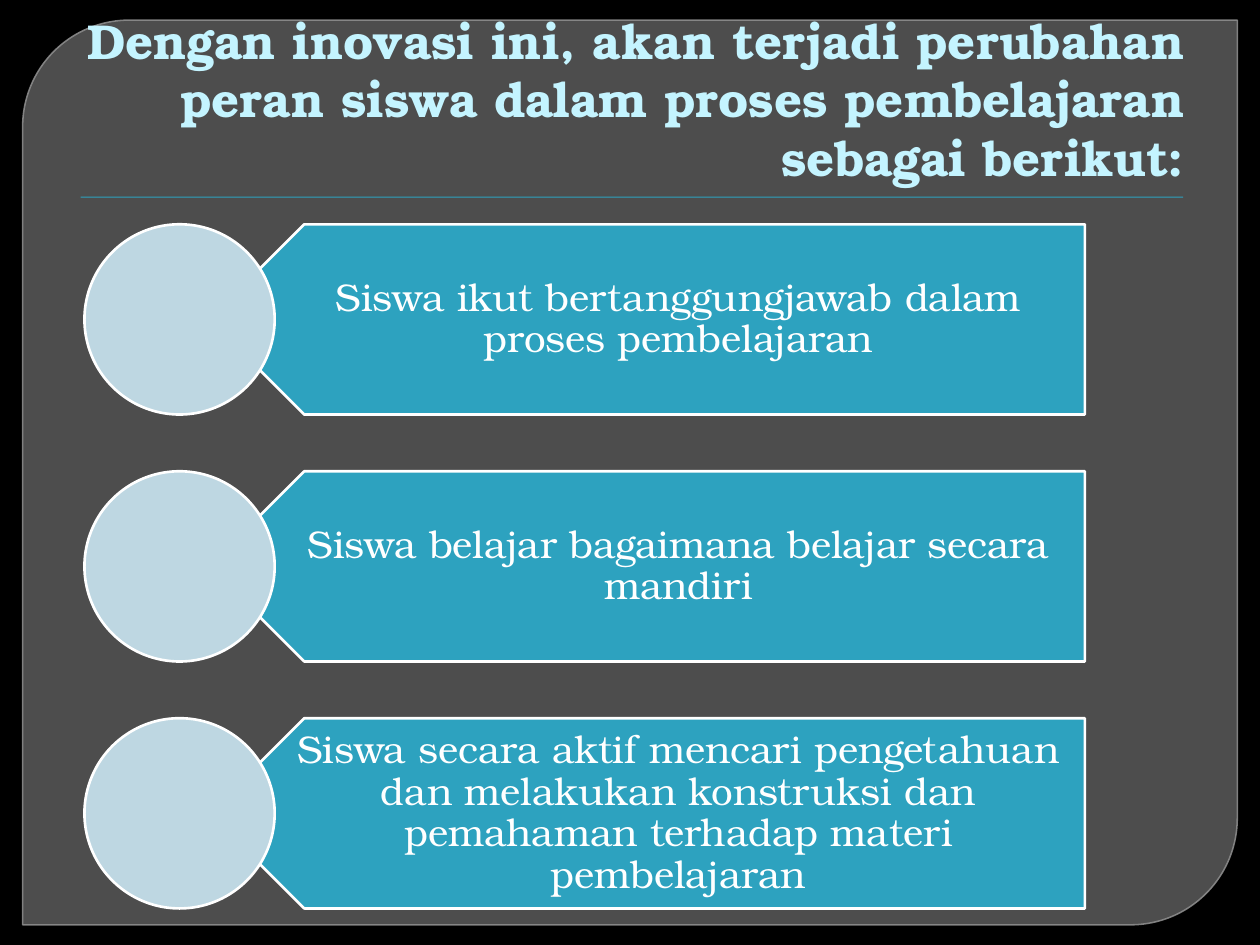
from dataclasses import dataclass

from lxml import etree
from pptx import Presentation
from pptx.dml.color import RGBColor
from pptx.enum.shapes import MSO_SHAPE
from pptx.enum.text import MSO_ANCHOR, PP_ALIGN
from pptx.oxml.ns import qn
from pptx.util import Inches, Pt

PANEL, RECT = MSO_SHAPE.ROUND_2_DIAG_RECTANGLE, MSO_SHAPE.RECTANGLE
PENTAGON, CIRCLE = MSO_SHAPE.PENTAGON, MSO_SHAPE.OVAL
MIDDLE, BOTTOM = MSO_ANCHOR.MIDDLE, MSO_ANCHOR.BOTTOM
CENTER, RIGHT = PP_ALIGN.CENTER, PP_ALIGN.RIGHT


@dataclass(frozen=True)
class Theme:
    """Colours, font and type sizes of the slide."""
    background: str = "000000"
    panel: str = "777777"
    panel_line: str = "8E8E8E"
    accent: str = "2DA2BF"
    circle: str = "BED7E2"
    title: str = "C4F4FF"
    white: str = "FFFFFF"
    font: str = "TeX Gyre Bonum"
    title_size: int = 28
    body_size: int = 22


@dataclass(frozen=True)
class Box:
    """A rectangle in inches."""
    left: float
    top: float
    width: float
    height: float

    def emu(self) -> tuple:
        """Return the rectangle as python-pptx lengths."""
        return tuple(Inches(v) for v in (self.left, self.top, self.width, self.height))


@dataclass(frozen=True)
class Rows:
    """Equally spaced rows, each a circle overlapping a banner."""
    top: float = 1.78
    pitch: float = 1.96
    size: float = 1.51
    circle_left: float = 0.67
    banner_left: float = 1.66
    banner_width: float = 6.95

    def circle(self, i: int) -> Box:
        """Return the circle's place in row i."""
        return Box(self.circle_left, self.top + i * self.pitch, self.size, self.size)

    def banner(self, i: int) -> Box:
        """Return the banner's place in row i."""
        return Box(self.banner_left, self.top + i * self.pitch, self.banner_width, self.size)


THEME = Theme()
ROWS = Rows()
TITLE = ("Dengan inovasi ini, akan terjadi perubahan peran siswa "
         "dalam proses pembelajaran sebagai berikut:")
ROLES = (
    "Siswa ikut bertanggungjawab dalam proses pembelajaran",
    "Siswa belajar bagaimana belajar secara mandiri",
    "Siswa secara aktif mencari pengetahuan dan melakukan konstruksi dan "
    "pemahaman terhadap materi pembelajaran",
)


def set_alpha(fill_parent, percent: int) -> None:
    """Make the solid fill directly under an element translucent."""
    color = fill_parent.find(qn("a:solidFill"))[0]
    etree.SubElement(color, qn("a:alpha")).set("val", str(percent * 1000))


def add_shape(s, kind, box: Box, fill: str, line: str = "", weight: float = 1.5):
    """Draw a flat preset shape, outlined only when a line colour is given."""
    sp = s.shapes.add_shape(kind, *box.emu())
    sp.shadow.inherit = False
    sp.fill.solid()
    sp.fill.fore_color.rgb = RGBColor.from_string(fill)
    if line:
        sp.line.color.rgb = RGBColor.from_string(line)
        sp.line.width = Pt(weight)
    else:
        sp.line.fill.background()
    return sp


def add_text(s, box: Box, text: str, *, size: int, color: str, align, anchor,
             bold: bool = False, spacing: float = 1.0,
             insets: tuple = (0.1, 0.05, 0.1, 0.05)):
    """Place one formatted paragraph in a wrapping text box."""
    tf = s.shapes.add_textbox(*box.emu()).text_frame
    tf.word_wrap = True
    tf.vertical_anchor = anchor
    tf.margin_left, tf.margin_top, tf.margin_right, tf.margin_bottom = map(Inches, insets)
    p = tf.paragraphs[0]
    p.alignment = align
    p.line_spacing = spacing
    r = p.add_run()
    r.text = text
    r.font.name = THEME.font
    r.font.size = Pt(size)
    r.font.bold = bold
    r.font.color.rgb = RGBColor.from_string(color)


def add_panel(s) -> None:
    """Draw the translucent panel and the rule below the title."""
    sp = add_shape(s, PANEL, Box(0.18, 0.16, 9.64, 7.18), THEME.panel, THEME.panel_line, 0.87)
    sp.adjustments[0], sp.adjustments[1] = 0.118, 0
    props = sp.fill._xPr
    set_alpha(props, 65)
    set_alpha(props.find(qn("a:ln")), 88)
    add_shape(s, RECT, Box(0.64, 1.56, 8.75, 0.01), THEME.accent)


def add_role(s, i: int, text: str) -> None:
    """Draw one row: a banner pointing left, its text and its circle."""
    sp = add_shape(s, PENTAGON, ROWS.banner(i), THEME.accent, THEME.white)
    sp.rotation = 180
    add_text(s, ROWS.banner(i), text, size=THEME.body_size, color=THEME.white,
             align=CENTER, anchor=MIDDLE, spacing=0.9, insets=(0.67, 0.09, 0.17, 0.09))
    add_shape(s, CIRCLE, ROWS.circle(i), THEME.circle, THEME.white)


def main() -> None:
    """Build and save the slide."""
    prs = Presentation()
    prs.slide_width, prs.slide_height = Inches(10), Inches(7.5)
    s = prs.slides.add_slide(prs.slide_layouts[6])
    s.background.fill.solid()
    s.background.fill.fore_color.rgb = RGBColor.from_string(THEME.background)
    add_panel(s)
    add_text(s, Box(0.5, 0.28, 9, 1.25), TITLE, size=THEME.title_size, color=THEME.title,
             align=RIGHT, anchor=BOTTOM, bold=True, insets=(0.16, 0.05, 0.1, 0.05))
    for i, text in enumerate(ROLES):
        add_role(s, i, text)
    prs.save("out.pptx")


if __name__ == "__main__":
    main()
